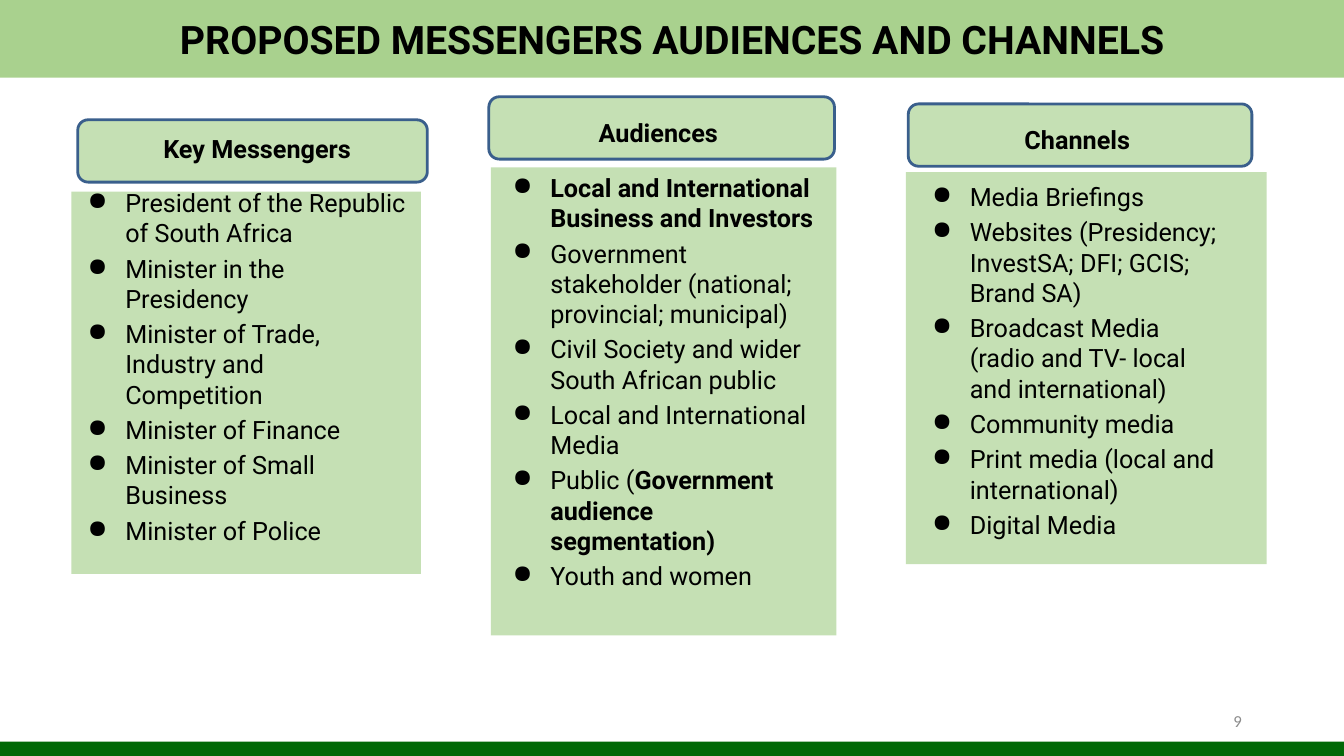
from lxml.etree import SubElement
from pptx import Presentation
from pptx.dml.color import RGBColor
from pptx.enum.shapes import MSO_SHAPE as Shape
from pptx.enum.text import MSO_ANCHOR as Anchor, PP_ALIGN as Align
from pptx.oxml.ns import qn
from pptx.util import Cm, Pt

WIDTH, HEIGHT = 33.87, 19.05
BLACK = RGBColor(0, 0, 0)
GREY = RGBColor(0x8C, 0x8C, 0x8C)
BLUE = RGBColor(0x3A, 0x5F, 0x8C)
PALE = RGBColor(0xC5, 0xE0, 0xB4)
LIGHT = RGBColor(0xA9, 0xD1, 0x8E)
DARK = RGBColor(0x00, 0x68, 0x06)
HEAD_H = 1.57
LABEL_W, LABEL_H = 6.76, 1.02
INDENT = Cm(0.95)

# Each list item is a string, or a list of (text, bold) runs.
# head: left, top, width; the other boxes are offsets from its corner.
COLUMNS = [
    dict(title="Key Messengers", head=(1.96, 3.02, 8.81), label=(1.14, 0.21),
         card=(-0.16, 1.81, 8.81, 9.63), body=(0, 1.58, 8.55, 10.26),
         items=["President of the Republic of South Africa",
                "Minister in the Presidency",
                "Minister of Trade, Industry and Competition",
                "Minister of Finance",
                "Minister of Small Business",
                "Minister of Police"]),
    dict(title="Audiences", head=(12.32, 2.44, 8.71), label=(0.89, 0.4),
         card=(0.05, 1.78, 8.71, 11.79), body=(0.35, 1.78, 8.08, 12.57),
         items=[[("Local and International Business and Investors", True)],
                "Government stakeholder (national; provincial; municipal)",
                "Civil Society and wider South African public",
                "Local and International Media",
                [("Public (", False),
                 ("Government audience segmentation)", True)],
                "Youth and women"]),
    dict(title="Channels", head=(22.89, 2.62, 8.66), label=(0.88, 0.38),
         card=(-0.06, 1.72, 9.09, 9.88), body=(0.35, 1.83, 7.85, 10.26),
         items=["Media Briefings",
                "Websites (Presidency; InvestSA; DFI; GCIS; Brand SA)",
                "Broadcast Media (radio and TV- local and international)",
                "Community media",
                "Print media (local and international)",
                "Digital Media"]),
]


def block(slide, box, fill, kind=Shape.RECTANGLE, line=None):
    shape = slide.shapes.add_shape(kind, *map(Cm, box))
    shape.shadow.inherit = False
    shape.fill.solid()
    shape.fill.fore_color.rgb = fill
    if line is None:
        shape.line.fill.background()
    else:
        shape.line.color.rgb = line
        shape.line.width = Pt(2)
    return shape


def write(para, text, size=18, bold=False, color=BLACK, font="Roboto",
          align=Align.LEFT):
    para.alignment = align
    run = para.add_run()
    run.text = text
    run.font.size = Pt(size)
    run.font.bold = bold
    run.font.name = font
    run.font.color.rgb = color


def text_box(slide, box, anchor=Anchor.TOP):
    frame = slide.shapes.add_textbox(*map(Cm, box)).text_frame
    frame.word_wrap = True
    frame.vertical_anchor = anchor
    return frame


def bullet(para):
    props = para._p.get_or_add_pPr()
    props.set("marL", str(INDENT))
    props.set("indent", str(-INDENT))
    SubElement(props, qn("a:buChar")).set("char", "●")


def bullets(slide, box, items):
    frame = text_box(slide, box)
    for i, item in enumerate(items):
        para = frame.add_paragraph() if i else frame.paragraphs[0]
        bullet(para)
        if i:
            para.space_before = Pt(3.6)
        runs = [(item, False)] if isinstance(item, str) else item
        for text, bold in runs:
            write(para, text, bold=bold)


def column(slide, title, head, label, card, body, items):
    left, top, width = head

    def place(dx, dy, w, h):
        return left + dx, top + dy, w, h

    # Heading, card and list
    block(slide, place(0, 0, width, HEAD_H), PALE,
          Shape.ROUNDED_RECTANGLE, BLUE)
    block(slide, place(*card), PALE)
    bullets(slide, place(*body), items)
    frame = text_box(slide, place(*label, LABEL_W, LABEL_H))
    write(frame.paragraphs[0], title, bold=True, align=Align.CENTER)


def banner(slide, box, title):
    frame = block(slide, box, LIGHT).text_frame
    frame.word_wrap = True
    frame.vertical_anchor = Anchor.MIDDLE
    write(frame.paragraphs[0], title, size=28, bold=True, align=Align.CENTER)


def footer(slide, box, number):
    left, top, width, height = box
    block(slide, box, DARK)
    frame = text_box(slide, (left + width - 9.94, top - 1.04, 7.62, 1.02),
                     Anchor.MIDDLE)
    write(frame.paragraphs[0], number, size=12, color=GREY, font="Calibri",
          align=Align.RIGHT)


def main():
    deck = Presentation()
    deck.slide_width, deck.slide_height = Cm(WIDTH), Cm(HEIGHT)
    slide = deck.slides.add_slide(deck.slide_layouts[6])
    footer(slide, (0, HEIGHT - 0.36, WIDTH, 0.36), "9")
    for spec_row in COLUMNS:
        column(slide, **spec_row)
    banner(slide, (0, 0, WIDTH, 1.96),
           "PROPOSED MESSENGERS AUDIENCES AND CHANNELS")
    deck.save("out.pptx")


if __name__ == "__main__":
    main()
